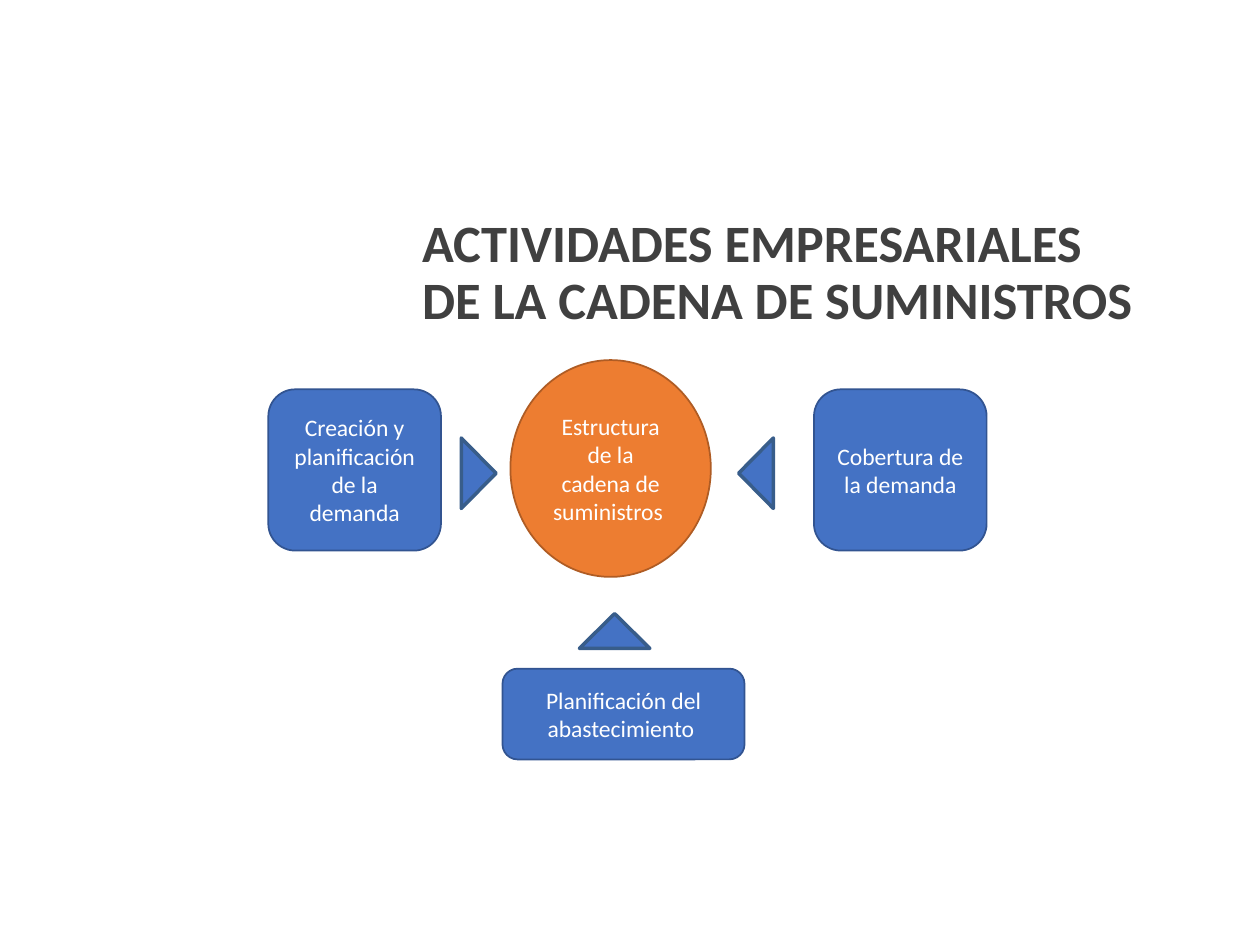
import pptx
import pptx.util
import pptx.dml.color
import pptx.enum.shapes
import pptx.enum.text

Cm = pptx.util.Cm
Pt = pptx.util.Pt
SHAPES = pptx.enum.shapes.MSO_SHAPE
COLOURS = {
    "title": "404040",
    "white": "FFFFFF",
    "blue": "4472C4",
    "blue_edge": "325491",
    "arrow_edge": "385D8A",
    "orange": "ED7D31",
    "orange_edge": "AF5C24",
}


def colour(name):
    """Return the named colour as an RGB value."""
    return pptx.dml.color.RGBColor.from_string(COLOURS[name])


def format_text(para, size, ink, bold=False):
    """Set the font of a paragraph."""
    values = {"name": "Calibri", "size": Pt(size), "bold": bold}
    for key, value in values.items():
        setattr(para.font, key, value)
    para.font.color.rgb = colour(ink)


def set_frame(frame):
    """Wrap the text and centre it vertically."""
    values = {"word_wrap": True, "vertical_anchor": pptx.enum.text.MSO_ANCHOR.MIDDLE}
    for key, value in values.items():
        setattr(frame, key, value)


def add_title(page, left, top, width, height):
    """Place the two-line title in its box."""
    box = page.shapes.add_textbox(Cm(left), Cm(top), Cm(width), Cm(height))
    set_frame(box.text_frame)
    para = box.text_frame.paragraphs[0]
    para.text = "ACTIVIDADES EMPRESARIALES \vDE LA CADENA DE SUMINISTROS"
    para.line_spacing = 0.9
    format_text(para, 30, "title", bold=True)


def add_figure(group, kind, box, fill, edge, weight):
    """Add a filled and outlined shape to the group."""
    figure = group.shapes.add_shape(kind, *(Cm(length) for length in box))
    figure.shadow.inherit = False
    figure.fill.solid()
    figure.fill.fore_color.rgb = colour(fill)
    figure.line.color.rgb = colour(edge)
    figure.line.width = Pt(weight)
    return figure


def add_diagram(page, left, top, width, height):
    """Place the central circle, its three activities and their arrows."""
    group = page.shapes.add_group_shape()
    side_width, side_height, side_top = 3.48, 3.25, 0.59
    supply_height = 1.83
    side, circle = SHAPES.ROUNDED_RECTANGLE, SHAPES.OVAL
    nodes = [
        (circle, 4.88, 0, 4.04, 4.37, "orange",
         "Estructura de la cadena de suministros "),
        (side, 0, side_top, side_width, side_height, "blue",
         "Creación y planificación de la demanda"),
        (side, 4.72, height - supply_height, 4.88, supply_height, "blue",
         "Planificación del abastecimiento "),
        (side, width - side_width, side_top, side_width, side_height, "blue",
         "Cobertura de la demanda"),
    ]
    for kind, x, y, node_width, node_height, fill, words in nodes:
        box = (left + x, top + y, node_width, node_height)
        node = add_figure(group, kind, box, fill, fill + "_edge", 1)
        set_frame(node.text_frame)
        para = node.text_frame.paragraphs[0]
        para.text = words
        para.alignment = pptx.enum.text.PP_ALIGN.CENTER
        format_text(para, 13.5, "white")

    for x, y, turn in [(9.12, 1.93, 90), (3.53, 1.93, 270), (6.27, 5.11, 180)]:
        box = (left + x, top + y, 1.42, 0.7)
        arrow = add_figure(group, SHAPES.FLOWCHART_MERGE, box, "blue", "arrow_edge", 2)
        arrow.rotation = turn


def main():
    """Build the slide and save it."""
    deck = pptx.Presentation()
    deck.slide_width, deck.slide_height = Cm(25.4), Cm(19.05)
    page = deck.slides.add_slide(deck.slide_layouts[6])
    add_title(page, 8.26, 4.11, 17.14, 2.84)
    add_diagram(page, 5.41, 7.26, 14.48, 8.05)
    deck.save("out.pptx")


if __name__ == "__main__":
    main()
